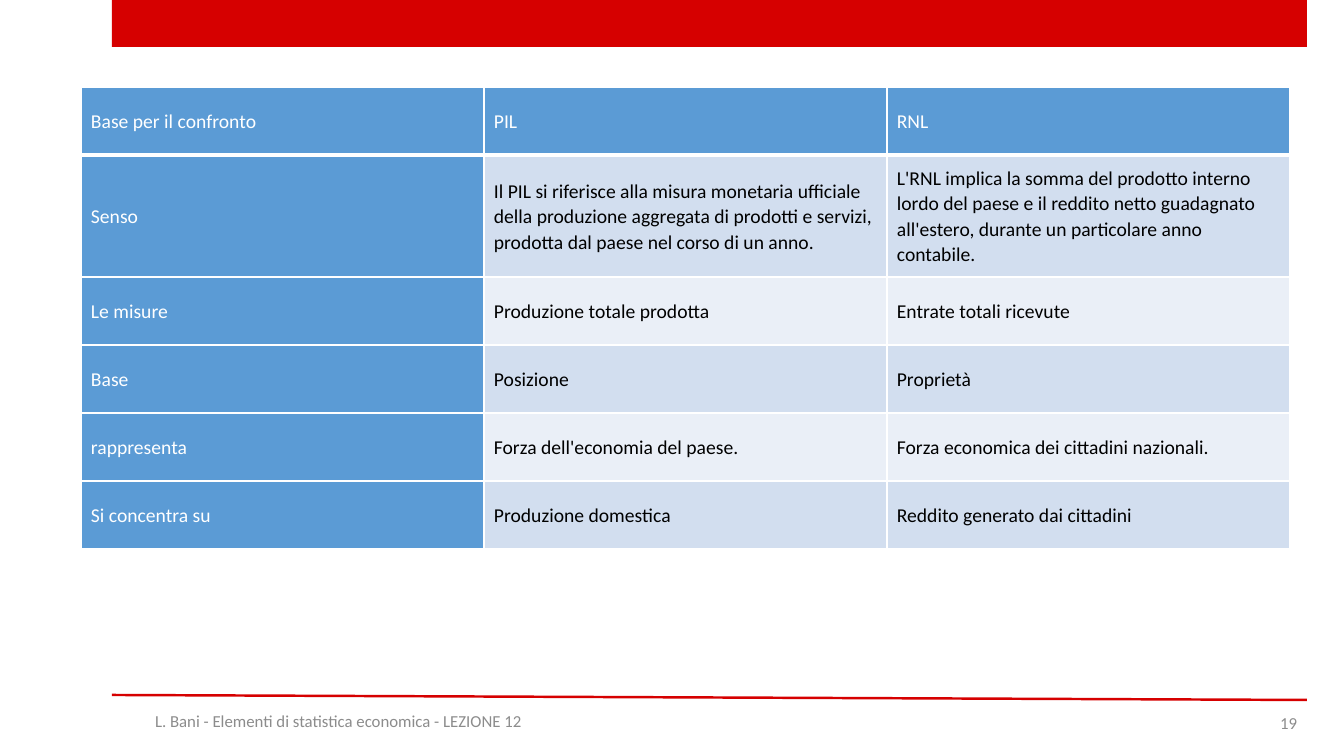
import pptx
import pptx.dml.color
import pptx.enum.shapes
import pptx.enum.text
import pptx.oxml
import pptx.oxml.ns
import pptx.util
import lxml.etree

EMU_PER_PX = 914400 / 100.8
THEME = {
    "red": "D60000",
    "blue": "5B9BD5",
    "bands": ("D2DEEF", "EAEFF7"),
    "white": "FFFFFF",
    "black": "000000",
    "grey": "8C8C8C",
    "font": "Calibri",
    "table_size": 14,
    "footer_size": 12,
}
ROWS = [
    ("Base per il confronto", "PIL", "RNL"),
    (
        "Senso",
        "Il PIL si riferisce alla misura monetaria ufficiale della produzione aggregata "
        "di prodotti e servizi, prodotta dal paese nel corso di un anno.",
        "L'RNL implica la somma del prodotto interno lordo del paese e il reddito netto "
        "guadagnato all'estero, durante un particolare anno contabile.",
    ),
    ("Le misure", "Produzione totale prodotta", "Entrate totali ricevute"),
    ("Base", "Posizione", "Proprietà"),
    ("rappresenta", "Forza dell'economia del paese.", "Forza economica dei cittadini nazionali."),
    ("Si concentra su", "Produzione domestica", "Reddito generato dai cittadini"),
]
COLUMN_WIDTH = 403
ROW_HEIGHTS = (68, 110, 68, 68, 68, 68)


def px(length):
    return pptx.util.Emu(round(length * EMU_PER_PX))


def rgb(value):
    return pptx.dml.color.RGBColor.from_string(value)


def apply(target, values):
    for name, value in values.items():
        setattr(target, name, value)


def fill(target, color):
    target.fill.solid()
    target.fill.fore_color.rgb = rgb(color)


def write(paragraph, text, size, color, **format_values):
    run = paragraph.add_run()
    run.text = text
    apply(run.font, {"name": THEME["font"], "size": pptx.util.Pt(size), "bold": False})
    run.font.color.rgb = rgb(color)
    apply(paragraph, format_values)


def add_band(slide, left, top, width, height):
    shape = slide.shapes.add_shape(
        pptx.enum.shapes.MSO_SHAPE.RECTANGLE, px(left), px(top), px(width), px(height)
    )
    shape.shadow.inherit = False
    fill(shape, THEME["red"])
    shape.line.fill.background()


def add_rule(slide, *ends):
    connector = slide.shapes.add_connector(
        pptx.enum.shapes.MSO_CONNECTOR.STRAIGHT, *map(px, ends)
    )
    connector.line.color.rgb = rgb(THEME["red"])
    connector.line.width = pptx.util.Pt(1.75)
    properties = connector.element.spPr
    lxml.etree.SubElement(properties, pptx.oxml.ns.qn("a:effectLst"))


def add_footer(slide, left, top, width, height, text, alignment):
    shape = slide.shapes.add_textbox(px(left), px(top), px(width), px(height))
    frame = shape.text_frame
    apply(frame, {"word_wrap": True, "vertical_anchor": pptx.enum.text.MSO_ANCHOR.MIDDLE})
    write(frame.paragraphs[0], text, THEME["footer_size"], THEME["grey"], alignment=alignment)


def set_borders(cell, widths):
    properties = cell._tc.get_or_add_tcPr()
    for index, (side, width) in enumerate(widths.items()):
        border = pptx.oxml.parse_xml(
            f'<a:{side} {pptx.oxml.ns.nsdecls("a")} w="{pptx.util.Pt(width)}">'
            f'<a:solidFill><a:srgbClr val="{THEME["white"]}"/></a:solidFill></a:{side}>'
        )
        properties.insert(index, border)


def format_cell(cell, text, row, column):
    heading = row == 0 or column == 0
    margins = ("margin_left", "margin_top", "margin_right", "margin_bottom")
    apply(cell, dict.fromkeys(margins, px(10)))
    cell.vertical_anchor = pptx.enum.text.MSO_ANCHOR.MIDDLE
    fill(cell, THEME["blue"] if heading else THEME["bands"][(row - 1) % 2])
    set_borders(cell, {"lnL": 1, "lnR": 1, "lnT": 1, "lnB": 1 if row else 3})
    color = THEME["white"] if heading else THEME["black"]
    write(cell.text_frame.paragraphs[0], text, THEME["table_size"], color, line_spacing=1.07)


def add_comparison(slide, left, top):
    columns = len(ROWS[0])
    frame = slide.shapes.add_table(
        len(ROWS), columns, px(left), px(top), px(columns * COLUMN_WIDTH), px(sum(ROW_HEIGHTS))
    )
    table = frame.table
    apply(table, {"first_row": False, "horz_banding": False})
    for column in table.columns:
        column.width = px(COLUMN_WIDTH)
    for row, texts in enumerate(ROWS):
        table.rows[row].height = px(ROW_HEIGHTS[row])
        for column, text in enumerate(texts):
            format_cell(table.cell(row, column), text, row, column)


def main():
    presentation = pptx.Presentation()
    apply(presentation, {"slide_width": px(1344), "slide_height": px(756)})
    slide = presentation.slides.add_slide(presentation.slide_layouts[6])
    align = pptx.enum.text.PP_ALIGN
    add_band(slide, 112, 0, 1195, 47)
    add_rule(slide, 112, 695, 1307, 700)
    add_comparison(slide, 81, 87)
    add_footer(
        slide, 112, 701, 453, 40,
        "L. Bani - Elementi di statistica economica - LEZIONE 12", align.CENTER,
    )
    add_footer(slide, 1005, 703, 302, 40, "19", align.RIGHT)
    presentation.save("out.pptx")


if __name__ == "__main__":
    main()
